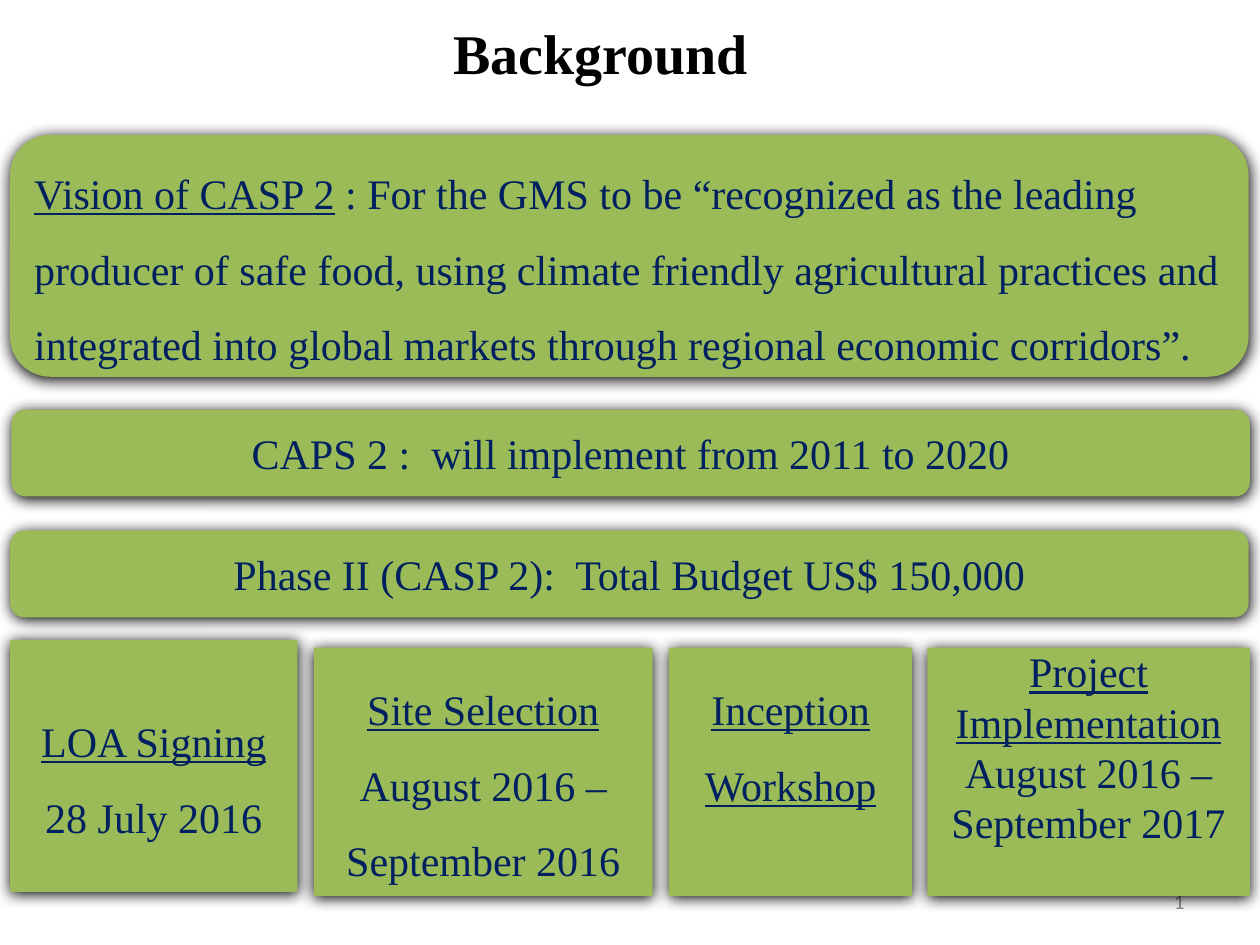
import pptx
import pptx.dml.color
import pptx.enum.shapes
import pptx.enum.text
import pptx.oxml
import pptx.oxml.ns
import pptx.util
from pptx.util import Inches

GREEN = pptx.dml.color.RGBColor(0x9B, 0xBB, 0x59)
NAVY = pptx.dml.color.RGBColor(0x00, 0x20, 0x60)
BLACK = pptx.dml.color.RGBColor(0, 0, 0)
GREY = pptx.dml.color.RGBColor(0x8C, 0x8C, 0x8C)

ROUNDED = pptx.enum.shapes.MSO_SHAPE.ROUNDED_RECTANGLE
SQUARE = pptx.enum.shapes.MSO_SHAPE.RECTANGLE
LEFT = pptx.enum.text.PP_ALIGN.LEFT
CENTER = pptx.enum.text.PP_ALIGN.CENTER
RIGHT = pptx.enum.text.PP_ALIGN.RIGHT
MIDDLE = pptx.enum.text.MSO_ANCHOR.MIDDLE


def outer_shadow(blur, distance, degrees, opacity):
    """Return an effect list; blur and distance are in points."""
    return pptx.oxml.parse_xml(
        f'<a:effectLst {pptx.oxml.ns.nsdecls("a")}>'
        f'<a:outerShdw blurRad="{pptx.util.Pt(blur)}" dist="{pptx.util.Pt(distance)}" '
        f'dir="{degrees * 60000}" algn="ctr" rotWithShape="0">'
        f'<a:srgbClr val="000000"><a:alpha val="{opacity * 1000}"/></a:srgbClr>'
        '</a:outerShdw></a:effectLst>')


prs = pptx.Presentation()
prs.slide_width, prs.slide_height = Inches(10), Inches(7.5)
slide = prs.slides.add_slide(prs.slide_layouts[5])

# Title
title = slide.shapes.title
title.left, title.top = Inches(1.75), Inches(0)
title.width, title.height = Inches(6.04), Inches(0.83)
title.text_frame.vertical_anchor = MIDDLE
heading = title.text_frame.paragraphs[0]
heading.alignment = CENTER
heading_run = heading.add_run()
heading_run.text = "Background"
heading_run.font.size = pptx.util.Pt(32)
heading_run.font.bold = True
heading_run.font.color.rgb = BLACK
heading_run.font._element.append(outer_shadow(3, 3, 45, 43))
heading_run.font.name = "Times New Roman"

# Slide number
number = slide.shapes.add_textbox(Inches(7.17), Inches(6.95), Inches(2.33), Inches(0.4))
number.text_frame.word_wrap = True
number.text_frame.vertical_anchor = MIDDLE
number_line = number.text_frame.paragraphs[0]
number_line.alignment = RIGHT
number_line._p.append(pptx.oxml.parse_xml(
    f'<a:fld {pptx.oxml.ns.nsdecls("a")} id="{{B6F15528-21DE-4FAA-801E-634DDDAF4B2B}}" '
    f'type="slidenum"><a:rPr lang="en-US" sz="1200"><a:solidFill><a:srgbClr val="{GREY}"/>'
    '</a:solidFill><a:latin typeface="Calibri"/></a:rPr><a:t>2</a:t></a:fld>'))

# Each panel: shape, left, top, width, height, alignment, line spacing, bottom inset,
# and paragraphs of (text, underlined) runs
panels = [
    (ROUNDED, 0.09, 3.25, 9.83, 0.69, CENTER, 1.0, 0.05,
     [[("CAPS 2 :  will implement from 2011 to 2020", False)]]),
    (ROUNDED, 0.08, 4.21, 9.83, 0.69, CENTER, 1.0, 0.05,
     [[("Phase II (CASP 2):  Total Budget US$ 150,000", False)]]),
    (ROUNDED, 0.08, 1.07, 9.83, 1.92, LEFT, 1.5, 0.05,
     [[("Vision of CASP 2", True),
       (" : For the GMS to be “recognized as the leading producer of safe food, using "
        "climate friendly agricultural practices and integrated into global markets "
        "through regional economic corridors”.", False)]]),
    (SQUARE, 5.31, 5.14, 1.93, 1.97, CENTER, 1.5, 0.65,
     [[("Inception Workshop", True)]]),
    (SQUARE, 2.49, 5.14, 2.69, 1.97, CENTER, 1.5, 0.05,
     [[("Site Selection", True)], [("August 2016 – September 2016", False)]]),
    (SQUARE, 0.08, 5.08, 2.28, 2, CENTER, 1.5, 0.05,
     [[("LOA Signing", True)], [("28 July 2016", False)]]),
    (SQUARE, 7.36, 5.14, 2.56, 1.97, CENTER, 1.0, 0.45,
     [[("Project Implementation", True)], [("August 2016 – September 2017", False)]]),
]

for kind, left, top, width, height, alignment, spacing, bottom, paragraphs in panels:
    panel = slide.shapes.add_shape(
        kind, Inches(left), Inches(top), Inches(width), Inches(height))
    panel.fill.solid()
    panel.fill.fore_color.rgb = GREEN
    panel.line.fill.background()
    panel._element.spPr.append(outer_shadow(8.5, 1, 90, 100))
    frame = panel.text_frame
    frame.word_wrap = True
    frame.vertical_anchor = MIDDLE
    frame.margin_bottom = Inches(bottom)
    for index, runs in enumerate(paragraphs):
        paragraph = frame.add_paragraph() if index else frame.paragraphs[0]
        paragraph.alignment = alignment
        paragraph.line_spacing = spacing
        for text, underlined in runs:
            run = paragraph.add_run()
            run.text = text
            run.font.name = "Times New Roman"
            run.font.size = pptx.util.Pt(24)
            run.font.color.rgb = NAVY
            run.font.underline = underlined

prs.save("out.pptx")
